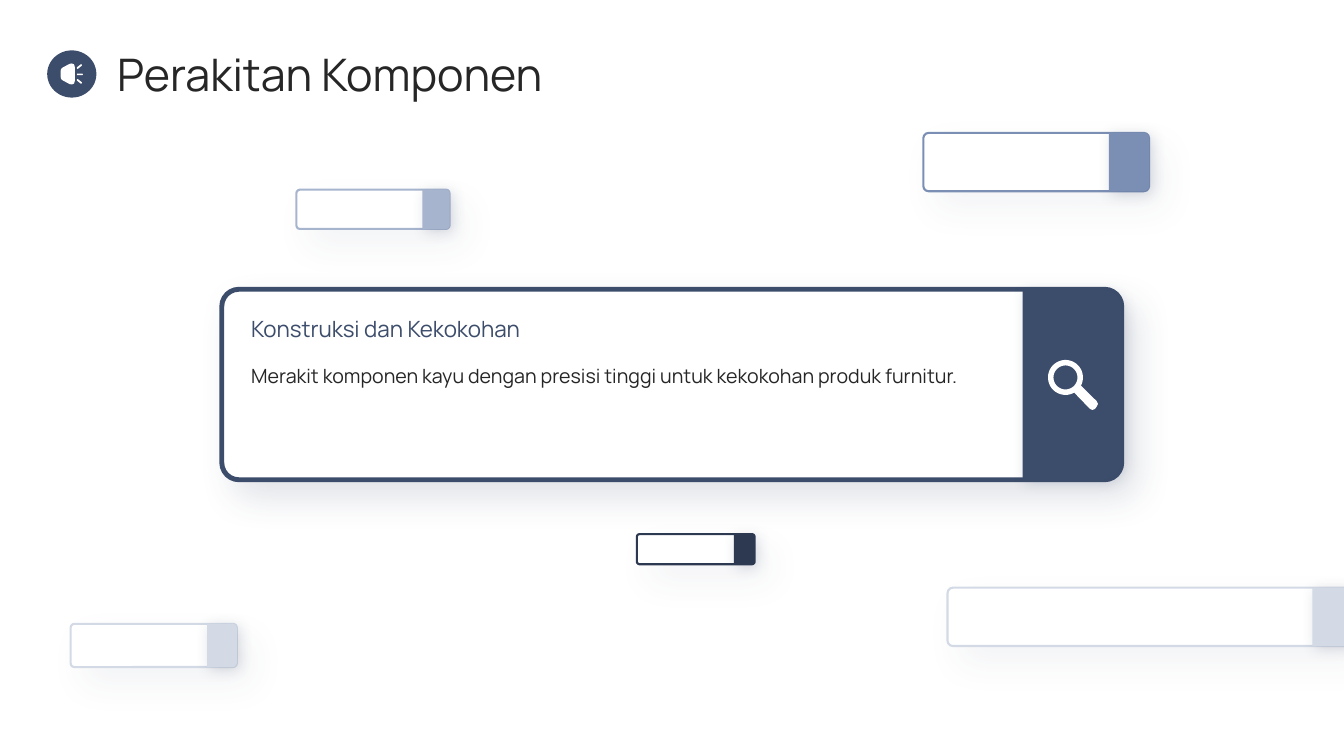
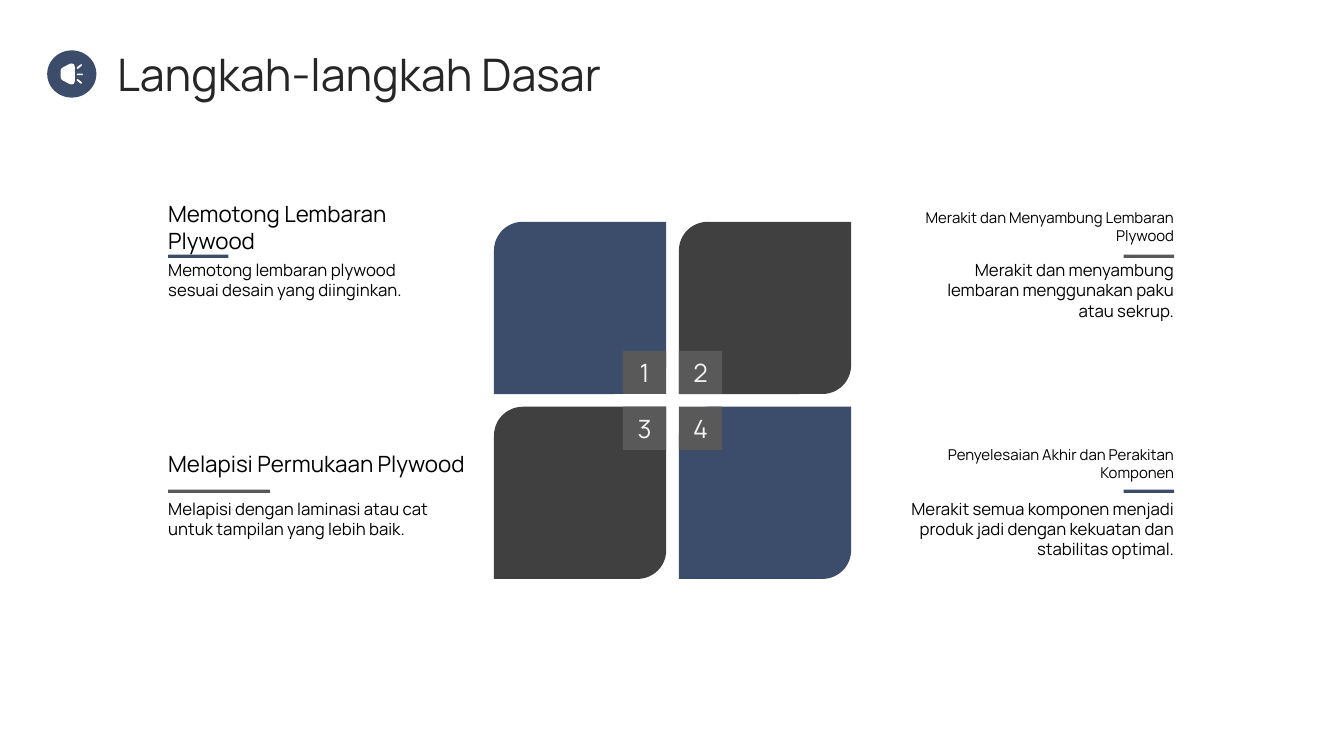
from math import cos, radians, sin

from lxml.etree import SubElement
from pptx import Presentation
from pptx.dml.color import RGBColor
from pptx.enum.shapes import MSO_SHAPE
from pptx.enum.text import MSO_ANCHOR, PP_ALIGN
from pptx.oxml.ns import qn
from pptx.util import Cm, Pt

FONT = "Manrope"
HEX = {
    "navy": "3C4C6B", "night": "2D3950", "steel": "7B8FB5", "mist": "A7B4CE",
    "pale": "D3DAE6", "white": "FFFFFF", "ink": "262626", "black": "000000",
    "coal": "404040", "gray": "595959", "light": "F2F2F2",
}


def color(name):
    """Return a named colour."""
    return RGBColor.from_string(HEX[name])


def paint(shape, fill, line=None, width=0, shade=None):
    """Set fill, outline and shadow (alpha, blur, distance, angle)."""
    shape.shadow.inherit = False
    shape.fill.solid()
    shape.fill.fore_color.rgb = color(fill)
    if line:
        shape.line.color.rgb = color(line)
        shape.line.width = Pt(width)
    else:
        shape.line.fill.background()
    if shade:
        alpha, blur, dist, angle = shade
        effects = shape.element.spPr.find(qn("a:effectLst"))
        outer = SubElement(
            effects, qn("a:outerShdw"), blurRad=str(Pt(blur)), dist=str(Pt(dist)),
            dir=str(angle * 60000), algn="tl", rotWithShape="0")
        tint = SubElement(outer, qn("a:srgbClr"), val=HEX["navy"])
        SubElement(tint, qn("a:alpha"), val=str(alpha * 1000))
    return shape


def block(slide, kind, box, fill, **style):
    """Add a preset shape in a box given in centimetres."""
    shape = slide.shapes.add_shape(kind, *map(Cm, box))
    return paint(shape, fill, **style)


def draw(slide, box, loops, fill, **style):
    """Add an outline whose loops are fractions of its box."""
    x, y, w, h = box
    loops = [[(Cm(x + u * w), Cm(y + v * h)) for u, v in loop] for loop in loops]
    pen = slide.shapes.build_freeform(*loops[0][0])
    pen.add_line_segments(loops[0][1:])
    for loop in loops[1:]:
        pen.move_to(*loop[0])
        pen.add_line_segments(loop[1:])
    return paint(pen.convert_to_shape(), fill, **style)


def arc(x, y, wide, high, start, end, count=12):
    """Return points along part of an ellipse."""
    turns = [radians(start + (end - start) * i / count) for i in range(count + 1)]
    return [(x + wide * cos(t), y + high * sin(t)) for t in turns]


def write(shape, text, size=12, tone="black", align=PP_ALIGN.LEFT, anchor=MSO_ANCHOR.TOP):
    """Put one formatted paragraph into a shape."""
    frame = shape.text_frame
    frame.word_wrap = True
    frame.vertical_anchor = anchor
    frame.margin_left = frame.margin_right = frame.margin_top = frame.margin_bottom = 0
    para = frame.paragraphs[0]
    para.alignment = align
    run = para.add_run()
    run.text = text
    run.font.name = FONT
    run.font.size = Pt(size)
    run.font.color.rgb = color(tone)


def label(slide, box, text, **style):
    """Add a text box."""
    write(slide.shapes.add_textbox(*map(Cm, box)), text, **style)


def header(slide, title, x=1.19, y=1.27):
    """Place the round lamp icon and the title."""
    label(slide, (x + 1.76, y, 29.03, 1.19), title, size=32, tone="ink",
          anchor=MSO_ANCHOR.MIDDLE)
    block(slide, MSO_SHAPE.OVAL, (x, y, 1.24, 1.19), "navy")
    bulb = [(0.5, 0), (0.6, 0.04), (0.64, 0.18), (0.64, 0.82), (0.6, 0.96), (0.5, 1),
            (0.4, 0.98), (0.1, 0.81), (0.02, 0.74), (0, 0.65), (0, 0.35),
            (0.02, 0.26), (0.1, 0.19), (0.4, 0.02)]
    ray = [(0.75, 0.48), (0.98, 0.48), (1, 0.52), (0.98, 0.56), (0.75, 0.56), (0.73, 0.52)]
    low = [(0.77, 0.74), (0.96, 0.9), (0.95, 0.95), (0.9, 0.96), (0.73, 0.81), (0.73, 0.76)]
    high = [(u, 1 - v) for u, v in low]
    draw(slide, (x + 0.34, y + 0.33, 0.56, 0.53), [bulb, ray, low, high], "white")


def card(slide, box, tone, cap=0.69, width=1.5, alpha=5):
    """Place an outlined bar with a solid cap at its right end."""
    x, y, w, h = box
    bar = block(slide, MSO_SHAPE.ROUNDED_RECTANGLE, box, "white", line=tone,
                width=width, shade=(alpha, 25, 15, 50))
    bar.adjustments[0] = 0.09
    wide, high = 0.105 / cap, 0.105
    edge = [(0, 0), *arc(1 - wide, high, wide, high, -90, 0),
            *arc(1 - wide, 1 - high, wide, high, 0, 90), (0, 1)]
    end = cap * h
    draw(slide, (x + w - end, y, end, h), [edge], tone, shade=(20, 10, 3, 45))


def search(slide, box, head, body):
    """Place the large card with its lens and text."""
    x, y, w, h = box
    card(slide, box, "navy", cap=0.52, width=3.5, alpha=15)
    lens = arc(0.35, 0.35, 0.35, 0.35, 60, 388, 40)
    grip = [(0.97, 0.82), (1, 0.88), (0.97, 0.94), (0.94, 0.98), (0.89, 1), (0.84, 0.98)]
    hole = arc(0.35, 0.35, 0.24, 0.24, 360, 0, 40)
    draw(slide, (x + w - 1.86, y + 1.78, 1.26, 1.26), [lens + grip, hole], "white")
    label(slide, (x + 0.74, y + 0.66, 18.49, 0.74), head, size=16, tone="navy")
    label(slide, (x + 0.74, y + 1.88, 18.49, 2.39), body, size=14, tone="ink")


def tiles(slide, x, y, side=4.34, pitch=4.66, badge=1.09):
    """Place four tiles with numbers at their inner corners."""
    for i, tone in enumerate(("navy", "coal", "coal", "navy")):
        row, col = divmod(i, 2)
        left, top = x + col * pitch, y + row * pitch
        block(slide, MSO_SHAPE.ROUND_2_DIAG_RECTANGLE, (left, top, side, side), tone)
        inset = side - badge
        spot = (left + (1 - col) * inset, top + (1 - row) * inset, badge, badge)
        write(block(slide, MSO_SHAPE.RECTANGLE, spot, "gray"), str(i + 1), size=18,
              tone="light", align=PP_ALIGN.CENTER, anchor=MSO_ANCHOR.MIDDLE)


def note(slide, edge, right, tops, spans, tone, head, body):
    """Place a heading, rule and text flush with one edge."""
    boxes = [(edge - span if right else edge, top, span, high)
             for top, span, high in zip(tops, spans, (1.17, 0.08, 3.66))]
    align = PP_ALIGN.RIGHT if right else PP_ALIGN.LEFT
    label(slide, boxes[0], head, size=10.7 if right else 16, align=align,
          anchor=MSO_ANCHOR.MIDDLE)
    block(slide, MSO_SHAPE.RECTANGLE, boxes[1], tone)
    label(slide, boxes[2], body, align=align)


def build(slide):
    """Fill the slide on assembly."""
    search(slide, (5.59, 7.29, 22.68, 4.8), "Konstruksi dan Kekokohan",
           "Merakit komponen kayu dengan presisi tinggi untuk kekokohan produk furnitur.")
    for box, tone in (
        ((7.47, 4.78, 3.86, 0.99), "mist"),
        ((16.05, 13.46, 2.97, 0.76), "night"),
        ((23.27, 3.35, 5.69, 1.47), "steel"),
        ((23.88, 14.81, 10.21, 1.47), "pale"),
        ((1.78, 15.72, 4.19, 1.09), "pale"),
    ):
        card(slide, box, tone)
    header(slide, "Perakitan Komponen")


def steps(slide):
    """Fill the slide on basic steps."""
    tiles(slide, 12.45, 5.59)
    upper, lower = (5.13, 6.42, 6.55), (11.1, 12.34, 12.57)
    left, right = (4.24, False), (29.59, True)
    for side, tops, spans, tone, head, body in (
        (left, upper, (7.67, 1.52, 6.83), "navy", "Memotong Lembaran Plywood",
         "Memotong lembaran plywood sesuai desain yang diinginkan."),
        (right, upper, (7.14, 1.27, 6.65), "gray", "Merakit dan Menyambung Lembaran Plywood",
         "Merakit dan menyambung lembaran menggunakan paku atau sekrup."),
        (left, lower, (7.67, 2.57, 7.06), "gray", "Melapisi Permukaan Plywood",
         "Melapisi dengan laminasi atau cat untuk tampilan yang lebih baik."),
        (right, lower, (6.63, 1.27, 6.68), "navy", "Penyelesaian Akhir dan Perakitan Komponen",
         "Merakit semua komponen menjadi produk jadi dengan kekuatan dan stabilitas optimal."),
    ):
        note(slide, *side, tops, spans, tone, head, body)
    header(slide, "Langkah-langkah Dasar")


def main():
    """Build and save the deck."""
    deck = Presentation()
    deck.slide_width, deck.slide_height = Cm(33.87), Cm(19.05)
    for fill in (build, steps):
        fill(deck.slides.add_slide(deck.slide_layouts[6]))
    deck.save("out.pptx")


if __name__ == "__main__":
    main()
